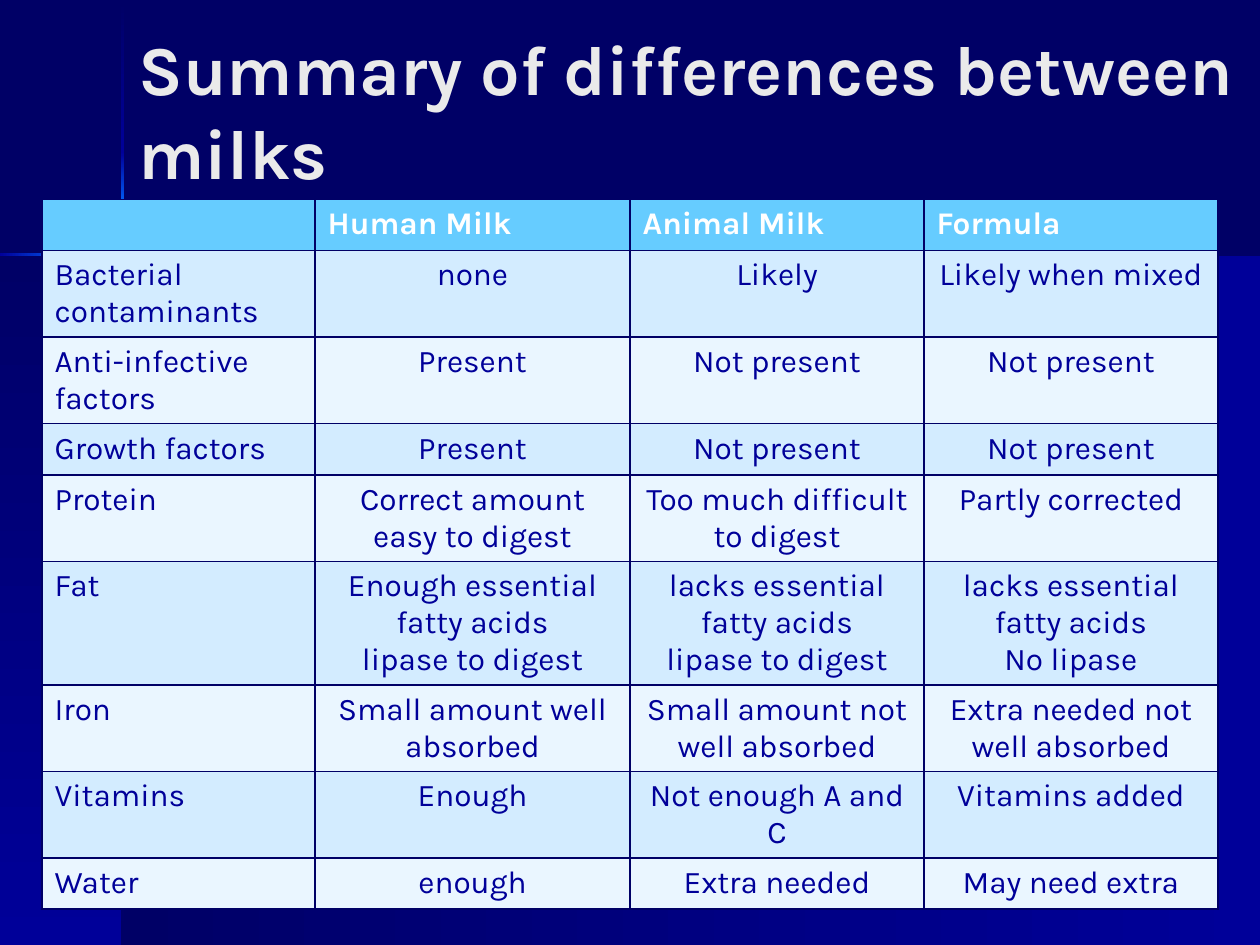
from copy import deepcopy
from itertools import pairwise

from lxml.etree import SubElement
from pptx import Presentation
from pptx.dml.color import RGBColor
from pptx.enum.shapes import MSO_SHAPE
from pptx.enum.text import MSO_ANCHOR, MSO_AUTO_SIZE, PP_ALIGN
from pptx.oxml.ns import qn
from pptx.util import Pt

FONT = "Karla"
NAVY = RGBColor(0x00, 0x00, 0x66)
BLUE = RGBColor(0x00, 0x00, 0x99)
BRIGHT = RGBColor(0x00, 0x66, 0xFF)
CREAM = RGBColor(0xFF, 0xFF, 0xCC)
TITLE_GREY = RGBColor(0xEA, 0xEA, 0xEA)
WHITE = RGBColor(0xFF, 0xFF, 0xFF)
HEADER_BLUE = RGBColor(0x66, 0xCC, 0xFF)
BANDS = [RGBColor(0xD3, 0xEC, 0xFF), RGBColor(0xEA, 0xF6, 0xFF)]

SLIDE_W, SLIDE_H = 720, 540
CROSS_X, CROSS_Y = 70, 145.4  # where the two background lines meet
LINE_W = 1.5

COL_WIDTHS = [156, 180, 168, 168]
ROW_H = 29.2
ROWS = [
    ["", "Human Milk", "Animal Milk", "Formula"],
    ["Bacterial contaminants", "none", "Likely", "Likely when mixed"],
    ["Anti-infective factors", "Present", "Not present", "Not present"],
    ["Growth factors", "Present", "Not present", "Not present"],
    ["Protein", "Correct amount easy to digest",
     "Too much difficult to digest", "Partly corrected"],
    ["Fat", "Enough essential fatty acids\nlipase to digest",
     "lacks essential fatty acids\nlipase to digest",
     "lacks essential fatty acids\nNo lipase"],
    ["Iron", "Small amount well absorbed", "Small amount not well absorbed",
     "Extra needed not well absorbed"],
    ["Vitamins", "Enough", "Not enough A and C", "Vitamins added"],
    ["Water", "enough", "Extra needed", "May need extra"],
]


def add_gradient_box(slide, box, colors, downward):
    """Add a borderless rectangle whose evenly spaced colours run right or down."""
    s = slide.shapes.add_shape(MSO_SHAPE.RECTANGLE, *map(Pt, box))
    s.shadow.inherit = False
    s.line.fill.background()
    s.fill.gradient()
    s.fill.gradient_angle = 270 if downward else 0
    stop_list = s._element.spPr.find(".//" + qn("a:gsLst"))
    for _ in colors[2:]:
        stop_list.append(deepcopy(stop_list[-1]))
    for i, (stop, color) in enumerate(zip(s.fill.gradient_stops, colors)):
        stop.position = i / (len(colors) - 1)
        stop.color.rgb = color


def add_glow_line(slide, edges, segments, downward):
    """Add a thin line made of gradient segments between successive edges."""
    for (start, end), colors in zip(pairwise(edges), segments):
        if downward:
            box = (CROSS_X - LINE_W / 2, start, LINE_W, end - start)
        else:
            box = (start, CROSS_Y - LINE_W / 2, end - start, LINE_W)
        add_gradient_box(slide, box, colors, downward)


def add_backdrop(slide):
    slide.background.fill.solid()
    slide.background.fill.fore_color.rgb = NAVY
    panel_h = SLIDE_H - CROSS_Y
    add_gradient_box(slide, (CROSS_X, CROSS_Y, SLIDE_W - CROSS_X, panel_h),
                     [NAVY, BLUE], downward=False)
    add_gradient_box(slide, (0, CROSS_Y, CROSS_X, panel_h),
                     [NAVY, BLUE], downward=True)
    segments = [[NAVY, BLUE], [BLUE, BRIGHT], [BRIGHT, CREAM, BRIGHT],
                [BRIGHT, BLUE], [BLUE, NAVY]]
    add_glow_line(slide, [0.7, 87, 119, 171.5, 203, SLIDE_H], segments,
                  downward=True)
    add_glow_line(slide, [0, 43.5, 95.8, 127.4, SLIDE_W], segments[1:],
                  downward=False)


def format_title(title, box, text):
    title.left, title.top, title.width, title.height = map(Pt, box)
    tf = title.text_frame
    tf.text = text
    tf.word_wrap = True
    tf.auto_size = MSO_AUTO_SIZE.NONE
    tf.vertical_anchor = MSO_ANCHOR.MIDDLE
    p = tf.paragraphs[0]
    p.alignment = PP_ALIGN.LEFT
    p.font.name, p.font.size, p.font.bold = FONT, Pt(40), True
    p.font.color.rgb = TITLE_GREY


def set_borders(cell, color, width):
    tc_pr = cell._tc.get_or_add_tcPr()
    for i, side in enumerate(("lnL", "lnR", "lnT", "lnB")):
        ln = tc_pr.makeelement(qn("a:" + side), {"w": str(Pt(width))})
        fill = SubElement(ln, qn("a:solidFill"))
        SubElement(fill, qn("a:srgbClr"), val=str(color))
        tc_pr.insert(i, ln)


def add_milk_table(slide, left, top):
    frame = slide.shapes.add_table(
        len(ROWS), len(COL_WIDTHS), Pt(left), Pt(top),
        Pt(sum(COL_WIDTHS)), Pt(ROW_H * len(ROWS)))
    table = frame.table
    for column, width in zip(table.columns, COL_WIDTHS):
        column.width = Pt(width)
    for r, texts in enumerate(ROWS):
        table.rows[r].height = Pt(ROW_H)
        header = r == 0
        for c, text in enumerate(texts):
            cell = table.cell(r, c)
            cell.text = text
            cell.fill.solid()
            cell.fill.fore_color.rgb = HEADER_BLUE if header else BANDS[(r - 1) % 2]
            set_borders(cell, NAVY, 1)
            for p in cell.text_frame.paragraphs:
                p.alignment = PP_ALIGN.LEFT if header or c == 0 else PP_ALIGN.CENTER
                p.font.name, p.font.size, p.font.bold = FONT, Pt(18), header
                p.font.color.rgb = WHITE if header else BLUE


def main():
    prs = Presentation()
    prs.slide_width, prs.slide_height = Pt(SLIDE_W), Pt(SLIDE_H)
    slide = prs.slides.add_slide(prs.slide_layouts[5])
    add_backdrop(slide)
    format_title(slide.shapes.title, (72, 6, 648, 113),
                 "Summary of differences between milks")
    add_milk_table(slide, 24, 114)
    prs.save("out.pptx")


if __name__ == "__main__":
    main()
